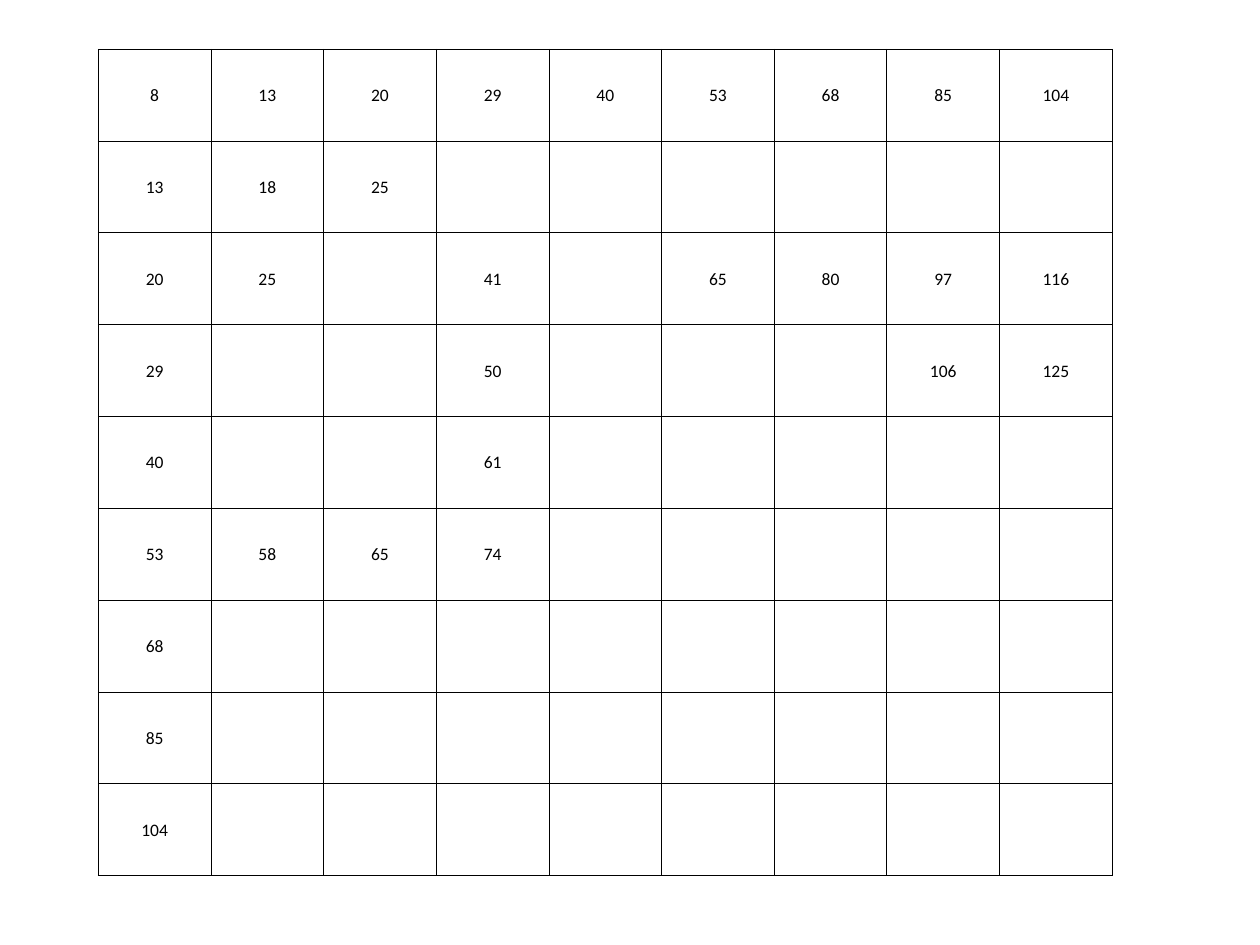
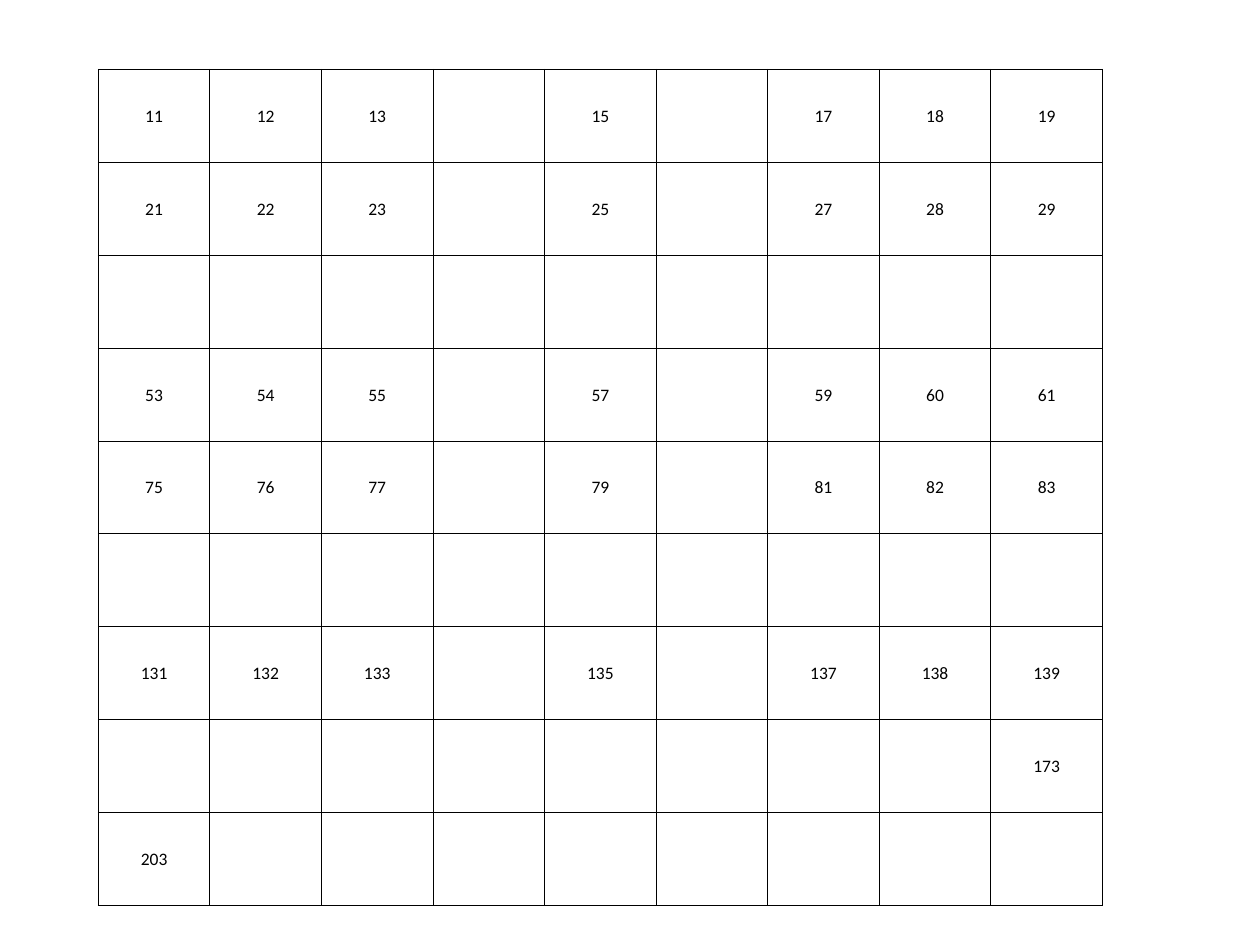
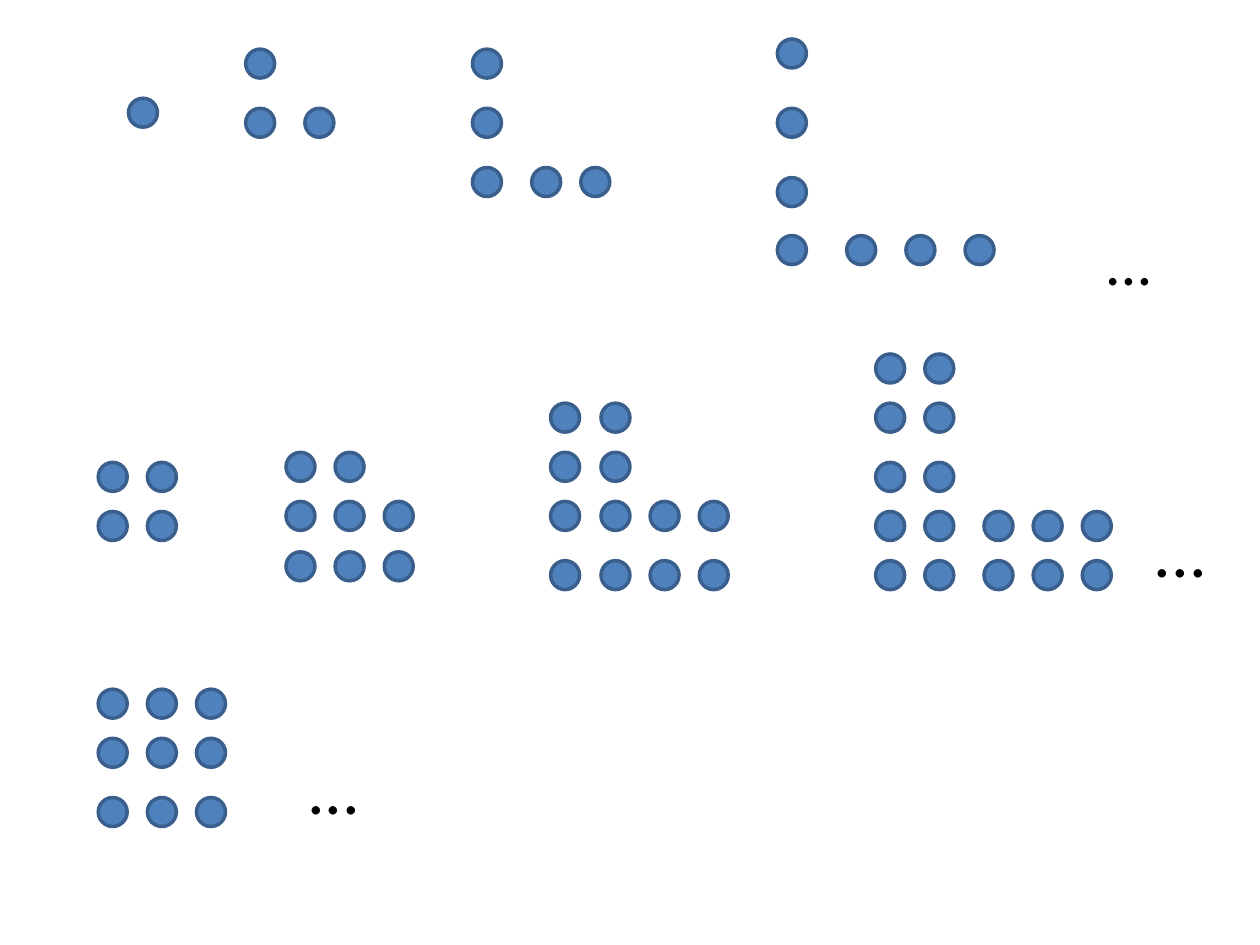
"""Build two number grids and a slide of growing dot patterns."""
from itertools import product

from lxml.etree import SubElement
from pptx import Presentation
from pptx.dml.color import RGBColor
from pptx.enum.shapes import MSO_SHAPE
from pptx.enum.text import MSO_ANCHOR, MSO_AUTO_SIZE, PP_ALIGN
from pptx.oxml.ns import qn
from pptx.util import Inches, Pt

COLORS = {"text": "000000", "border": "000000", "dot": "4F81BD", "outline": "3A5F8C"}
FONT = "Calibri"
GRID_SIZE = 9
DOT_SIZE = 0.23


def write_text(text_frame, text, size=10, alignment=PP_ALIGN.LEFT):
    paragraph = text_frame.paragraphs[0]
    paragraph.alignment = alignment
    run = paragraph.add_run()
    run.text = text
    run.font.name = FONT
    run.font.size = Pt(size)
    run.font.color.rgb = RGBColor.from_string(COLORS["text"])


def add_borders(cell):
    properties = cell._tc.get_or_add_tcPr()
    for side in ("lnL", "lnR", "lnT", "lnB"):
        line = SubElement(properties, qn(f"a:{side}"), w=str(Pt(0.5)))
        fill = SubElement(line, qn("a:solidFill"))
        SubElement(fill, qn("a:srgbClr"), val=COLORS["border"])


presentation = Presentation()
presentation.slide_width = Inches(10)
presentation.slide_height = Inches(7.5)
blank_layout = presentation.slide_layouts[6]

sum_grid = [
    [8, 13, 20, 29, 40, 53, 68, 85, 104],
    [13, 18, 25],
    [20, 25, "", 41, "", 65, 80, 97, 116],
    [29, "", "", 50, "", "", "", 106, 125],
    [40, "", "", 61],
    [53, 58, 65, 74],
    [68],
    [85],
    [104],
]
step_grid = [
    [11, 12, 13, "", 15, "", 17, 18, 19],
    [21, 22, 23, "", 25, "", 27, 28, 29],
    [],
    [53, 54, 55, "", 57, "", 59, 60, 61],
    [75, 76, 77, "", 79, "", 81, 82, 83],
    [],
    [131, 132, 133, "", 135, "", 137, 138, 139],
    [""] * 8 + [173],
    [203],
]

for grid, top, width, height in ((sum_grid, 0.39, 8.05, 6.56), (step_grid, 0.55, 7.97, 6.64)):
    slide = presentation.slides.add_slide(blank_layout)
    table = slide.shapes.add_table(
        GRID_SIZE, GRID_SIZE, Inches(0.78), Inches(top), Inches(width), Inches(height)
    ).table
    table.first_row = False
    table.horz_banding = False
    for row, column in product(range(GRID_SIZE), repeat=2):
        cell = table.cell(row, column)
        add_borders(cell)
        cell.fill.background()
        cell.vertical_anchor = MSO_ANCHOR.MIDDLE
        cell.margin_left = cell.margin_right = cell.margin_top = Inches(0.01)
        cell.margin_bottom = 0
        if column < len(grid[row]) and grid[row][column] != "":
            write_text(cell.text_frame, str(grid[row][column]), alignment=PP_ALIGN.CENTER)

slide = presentation.slides.add_slide(blank_layout)
dot_blocks = [
    ([1.02], [0.78]),
    ([1.95], [0.39]),
    ([1.95, 2.42], [0.86]),
    ([3.75], [0.39, 0.86]),
    ([3.75, 4.22, 4.61], [1.33]),
    ([6.17], [0.31, 0.86, 1.41]),
    ([6.17, 6.72, 7.19, 7.66], [1.87]),
    ([0.78, 1.17], [3.67, 4.06]),
    ([2.27, 2.66], [3.59]),
    ([2.27, 2.66, 3.05], [3.98, 4.38]),
    ([4.37, 4.77], [3.2, 3.59]),
    ([4.37, 4.77, 5.16, 5.55], [3.98, 4.45]),
    ([6.95, 7.34], [2.81, 3.2, 3.67]),
    ([6.95, 7.34, 7.81, 8.2, 8.59], [4.06, 4.45]),
    ([0.78, 1.17, 1.56], [5.47, 5.86, 6.33]),
]
for lefts, tops in dot_blocks:
    for left, top in product(lefts, tops):
        dot = slide.shapes.add_shape(
            MSO_SHAPE.FLOWCHART_CONNECTOR,
            Inches(left), Inches(top), Inches(DOT_SIZE), Inches(DOT_SIZE),
        )
        dot.shadow.inherit = False
        dot.fill.solid()
        dot.fill.fore_color.rgb = RGBColor.from_string(COLORS["dot"])
        dot.line.color.rgb = RGBColor.from_string(COLORS["outline"])
        dot.line.width = Pt(2)

ellipses = [
    (8.67, 1.72, 1.02, 0.71, 36, True),
    (9.06, 3.98, 0.63, 0.77, 40, False),
    (2.34, 5.86, 0.63, 0.77, 40, False),
]
for left, top, width, height, size, wraps in ellipses:
    text_box = slide.shapes.add_textbox(Inches(left), Inches(top), Inches(width), Inches(height))
    text_box.text_frame.word_wrap = wraps
    text_box.text_frame.auto_size = MSO_AUTO_SIZE.SHAPE_TO_FIT_TEXT
    write_text(text_box.text_frame, "...", size=size)

presentation.save("out.pptx")
